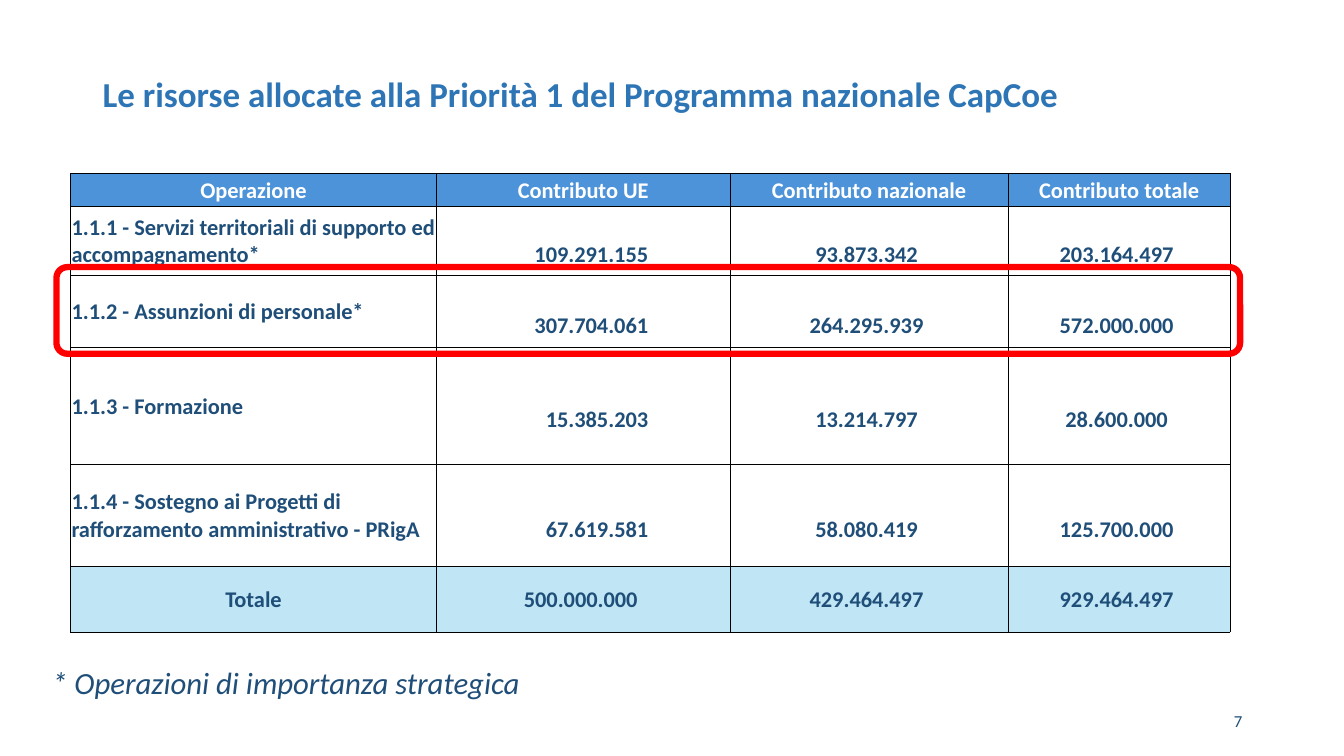
import pptx
import pptx.dml.color
import pptx.enum.shapes
import pptx.enum.text
import pptx.oxml
import pptx.oxml.ns
import pptx.util

WIDE, HIGH = 13.33, 7.5
BLUE, NAVY, HEAD, PALE = "2E75B6", "1F4E79", "4D93D9", "C0E6F5"
COLS = [3.63, 2.91, 2.76, 2.2]
ROWS = [0.33, 0.68, 0.72, 1.16, 1.01, 0.65]
DATA = [
    ["Operazione", "Contributo UE", "Contributo nazionale", "Contributo totale"],
    ["1.1.1 - Servizi territoriali di supporto ed accompagnamento*",
     "109.291.155", "93.873.342", "203.164.497"],
    ["1.1.2 - Assunzioni di personale*", "307.704.061", "264.295.939", "572.000.000"],
    ["1.1.3 - Formazione", "15.385.203", "13.214.797", "28.600.000"],
    ["1.1.4 - Sostegno ai Progetti di rafforzamento amministrativo - PRigA",
     "67.619.581", "58.080.419", "125.700.000"],
    ["Totale", "500.000.000", "429.464.497", "929.464.497"],
]
ALIGN = pptx.enum.text.PP_ALIGN
MIDDLE = pptx.enum.text.MSO_ANCHOR.MIDDLE
inch = pptx.util.Inches


def color(code):
    return pptx.dml.color.RGBColor.from_string(code)


def style(par, text, size, code, align=ALIGN.LEFT, **looks):
    par.text = text
    par.alignment = align
    font = par.runs[0].font
    font.color.rgb = color(code)
    for name, value in {"name": "Calibri", "size": pptx.util.Pt(size), **looks}.items():
        setattr(font, name, value)


def add_text(slide, box, text, size, code, anchor=MIDDLE, space=1.0, **looks):
    frame = slide.shapes.add_textbox(*map(inch, box)).text_frame
    frame.word_wrap = True
    frame.vertical_anchor = anchor
    style(frame.paragraphs[0], text, size, code, **looks)
    frame.paragraphs[0].line_spacing = space


def add_edges(cell):
    props = cell._tc.get_or_add_tcPr()
    for place, side in enumerate(("lnL", "lnR", "lnT", "lnB")):
        props.insert(place, pptx.oxml.parse_xml(
            f'<a:{side} {pptx.oxml.ns.nsdecls("a")} w="6350"><a:solidFill>'
            f'<a:srgbClr val="000000"/></a:solidFill></a:{side}>'))


def fill_cell(cell, text, row, col):
    first, last = row == 0, row == len(ROWS) - 1
    figure = col > 0 and not first
    body = figure and not last
    # EU amounts line up on the right; body figures sit half a line low
    right = body and col == 1
    pads = {
        "margin_left": 0.01,
        "margin_right": 0.81 if right else 0.06 if figure else 0.01,
        "margin_top": 0.28 if body else 0.01,
        "margin_bottom": 0,
    }
    for name, value in pads.items():
        setattr(cell, name, inch(value))
    cell.vertical_anchor = MIDDLE
    align = ALIGN.RIGHT if right else ALIGN.CENTER
    if col == 0 and not (first or last):
        align = ALIGN.LEFT
    style(cell.text_frame.paragraphs[0], text, 16,
          "FFFFFF" if first else NAVY, align, bold=True)
    if first or last:
        cell.fill.solid()
        cell.fill.fore_color.rgb = color(HEAD if first else PALE)
    else:
        cell.fill.background()
    add_edges(cell)


def add_grid(slide, left, top):
    table = slide.shapes.add_table(len(ROWS), len(COLS), inch(left), inch(top),
                                   inch(sum(COLS)), inch(sum(ROWS))).table
    for col, width in zip(table.columns, COLS):
        col.width = inch(width)
    for row, height in zip(table.rows, ROWS):
        row.height = inch(height)
    for row, line in enumerate(DATA):
        for col, text in enumerate(line):
            fill_cell(table.cell(row, col), text, row, col)


def add_frame(slide, box):
    shape = slide.shapes.add_shape(
        pptx.enum.shapes.MSO_SHAPE.ROUNDED_RECTANGLE, *map(inch, box))
    shape.adjustments[0] = 0.126
    shape.shadow.inherit = False
    shape.fill.background()
    shape.line.color.rgb = color("FF0000")
    shape.line.width = pptx.util.Pt(4.5)


def main():
    deck = pptx.Presentation()
    deck.slide_width, deck.slide_height = inch(WIDE), inch(HIGH)
    slide = deck.slides.add_slide(deck.slide_layouts[6])

    # Title, footnote and page number
    add_text(slide, (0.92, 0.23, 11.5, 1.45),
             "Le risorse allocate alla Priorità 1 del Programma nazionale CapCoe",
             25, BLUE, space=0.9, bold=True)
    add_text(slide, (0.42, 6.35, 11.5, 0.8), "* Operazioni di importanza strategica",
             22, NAVY, anchor=pptx.enum.text.MSO_ANCHOR.TOP, space=1.5, italic=True)
    add_text(slide, (9.42, 6.95, 3, 0.4), "7", 12, NAVY, align=ALIGN.RIGHT)

    # Funds by operation, with the second one framed
    add_grid(slide, 0.7, 1.72)
    add_frame(slide, (0.56, 2.65, 11.74, 0.86))
    deck.save("out.pptx")


if __name__ == "__main__":
    main()
